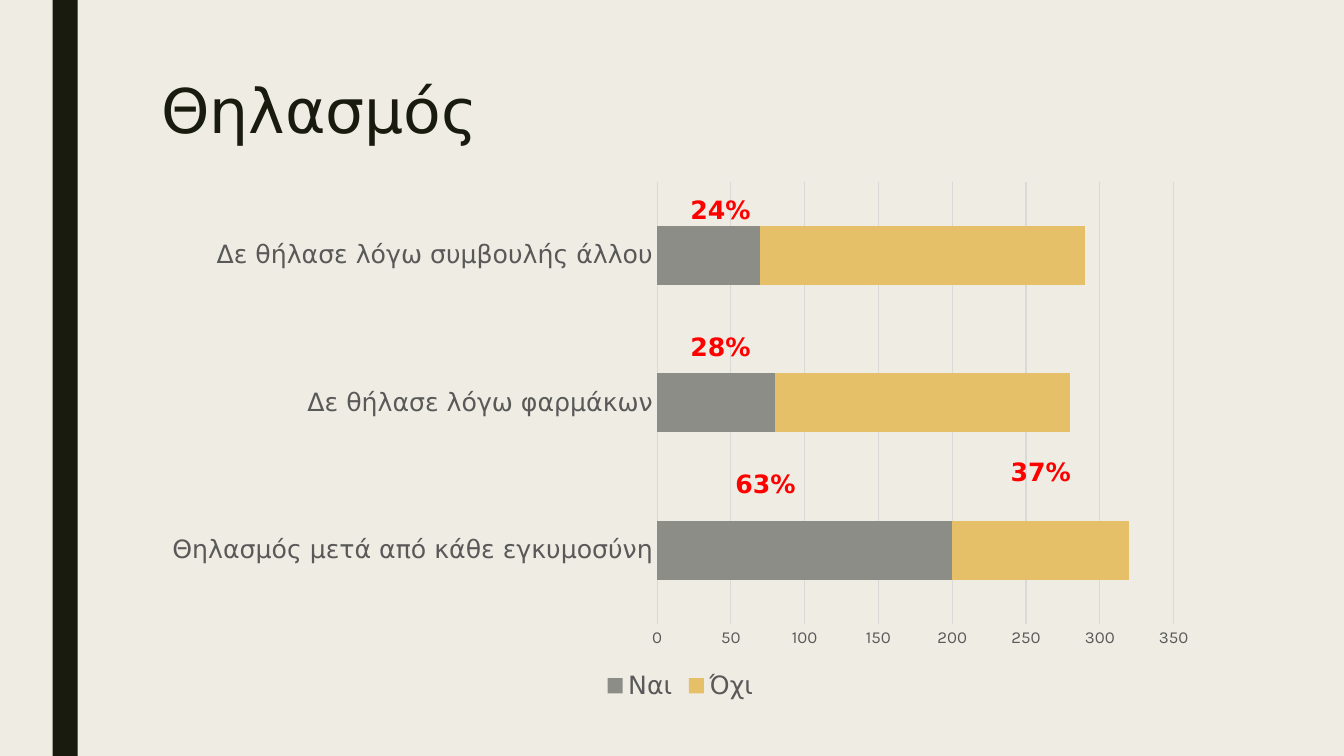
import dataclasses
import typing

import pptx
import pptx.chart.data
import pptx.dml.color
import pptx.enum.chart
import pptx.enum.shapes
import pptx.enum.text
import pptx.util

EMU_PER_PX = 9525


@dataclasses.dataclass(frozen=True)
class Theme:
    background: str = "EFEDE3"
    ink: str = "191B0E"
    axis_text: str = "595959"
    grid: str = "D9D9D9"
    percent: str = "FF0000"
    text_font: str = "DejaVu Sans"
    number_font: str = "Karla"
    title_size: int = 44
    label_size: int = 18
    tick_size: int = 12
    base_size: int = 10
    line_width: float = 0.75


class Box(typing.NamedTuple):
    left: int
    top: int
    width: int
    height: int


class Percentage(typing.NamedTuple):
    text: str
    left: int
    top: int


class Answer(typing.NamedTuple):
    name: str
    counts: tuple[int, ...]
    color: str


THEME = Theme()
SLIDE = Box(0, 0, 1280, 720)
SIDE_BAR = Box(50, 0, 24, 720)
TITLE = Box(144, 72, 1008, 156)
CHART = Box(144, 163, 1008, 509)
PERCENTAGE_WIDTH, PERCENTAGE_HEIGHT = 87, 38

QUESTIONS = (
    "Θηλασμός μετά από κάθε εγκυμοσύνη",
    "Δε θήλασε λόγω φαρμάκων",
    "Δε θήλασε λόγω συμβουλής άλλου",
)
ANSWERS = (
    Answer("Ναι", (200, 80, 70), "8C8D86"),
    Answer("Όχι", (120, 200, 220), "E6C069"),
)
PERCENTAGES = (
    Percentage("63%", 691, 441),
    Percentage("28%", 648, 311),
    Percentage("24%", 648, 180),
    Percentage("37%", 953, 430),
)


def px(length: int) -> pptx.util.Emu:
    return pptx.util.Emu(length * EMU_PER_PX)


def emu(box: Box) -> tuple[pptx.util.Emu, ...]:
    return tuple(px(length) for length in box)


def rgb(color: str) -> pptx.dml.color.RGBColor:
    return pptx.dml.color.RGBColor.from_string(color)


def fill_solid(fill, color: str) -> None:
    fill.solid()
    fill.fore_color.rgb = rgb(color)


def style_font(font, *, size: int, color: str, name: str = THEME.text_font,
               bold: bool = False) -> None:
    font.name = name
    font.size = pptx.util.Pt(size)
    font.bold = bold
    font.color.rgb = rgb(color)


def write_text(frame, text: str, *, size: int, color: str, bold: bool = False,
               line_spacing: float = 1.0) -> None:
    """Fill a text frame with one left-aligned, top-anchored paragraph."""
    frame.word_wrap = True
    frame.vertical_anchor = pptx.enum.text.MSO_ANCHOR.TOP
    paragraph = frame.paragraphs[0]
    paragraph.alignment = pptx.enum.text.PP_ALIGN.LEFT
    paragraph.line_spacing = line_spacing
    run = paragraph.add_run()
    run.text = text
    style_font(run.font, size=size, color=color, bold=bold)


def add_side_bar(slide) -> None:
    side_bar = slide.shapes.add_shape(
        pptx.enum.shapes.MSO_SHAPE.RECTANGLE, *emu(SIDE_BAR))
    side_bar.shadow.inherit = False
    fill_solid(side_bar.fill, THEME.ink)
    side_bar.line.fill.background()


def set_title(slide, text: str) -> None:
    title = slide.shapes.title
    title.left, title.top, title.width, title.height = emu(TITLE)
    title.text_frame.auto_size = pptx.enum.text.MSO_AUTO_SIZE.NONE
    write_text(title.text_frame, text, size=THEME.title_size, color=THEME.ink,
               line_spacing=0.89)


def style_line(line) -> None:
    line.color.rgb = rgb(THEME.grid)
    line.width = pptx.util.Pt(THEME.line_width)


def style_axes(chart) -> None:
    no_ticks = pptx.enum.chart.XL_TICK_MARK.NONE
    questions, counts = chart.category_axis, chart.value_axis
    for axis in (questions, counts):
        axis.major_tick_mark = axis.minor_tick_mark = no_ticks
    style_font(questions.tick_labels.font, size=THEME.label_size,
               color=THEME.axis_text)
    style_line(questions.format.line)
    questions.has_major_gridlines = False

    style_font(counts.tick_labels.font, size=THEME.tick_size,
               color=THEME.axis_text, name=THEME.number_font)
    counts.format.line.fill.background()
    counts.has_major_gridlines = True
    style_line(counts.major_gridlines.format.line)
    counts.minimum_scale, counts.maximum_scale, counts.major_unit = 0, 350, 50


def add_answer_chart(slide) -> None:
    answer_data = pptx.chart.data.CategoryChartData()
    answer_data.categories = QUESTIONS
    for answer in ANSWERS:
        answer_data.add_series(answer.name, answer.counts)
    chart = slide.shapes.add_chart(
        pptx.enum.chart.XL_CHART_TYPE.BAR_STACKED, *emu(CHART), answer_data).chart
    style_font(chart.font, size=THEME.base_size, color="000000",
               name=THEME.number_font)
    chart.has_title = False
    style_axes(chart)

    bars = chart.plots[0]
    bars.gap_width, bars.overlap = 150, 100
    bars.vary_by_categories = False
    for series, answer in zip(bars.series, ANSWERS):
        fill_solid(series.format.fill, answer.color)

    chart.has_legend = True
    chart.legend.position = pptx.enum.chart.XL_LEGEND_POSITION.BOTTOM
    chart.legend.include_in_layout = False
    style_font(chart.legend.font, size=THEME.label_size, color=THEME.axis_text)


def add_percentage(slide, percentage: Percentage) -> None:
    box = Box(percentage.left, percentage.top, PERCENTAGE_WIDTH, PERCENTAGE_HEIGHT)
    frame = slide.shapes.add_textbox(*emu(box)).text_frame
    frame.auto_size = pptx.enum.text.MSO_AUTO_SIZE.SHAPE_TO_FIT_TEXT
    write_text(frame, percentage.text, size=THEME.label_size,
               color=THEME.percent, bold=True)


def main() -> None:
    deck = pptx.Presentation()
    deck.slide_width, deck.slide_height = px(SLIDE.width), px(SLIDE.height)
    slide = deck.slides.add_slide(deck.slide_layouts.get_by_name("Title Only"))
    fill_solid(slide.background.fill, THEME.background)
    add_side_bar(slide)
    set_title(slide, "Θηλασμός")
    add_answer_chart(slide)
    for percentage in PERCENTAGES:
        add_percentage(slide, percentage)
    deck.save("out.pptx")


if __name__ == "__main__":
    main()
